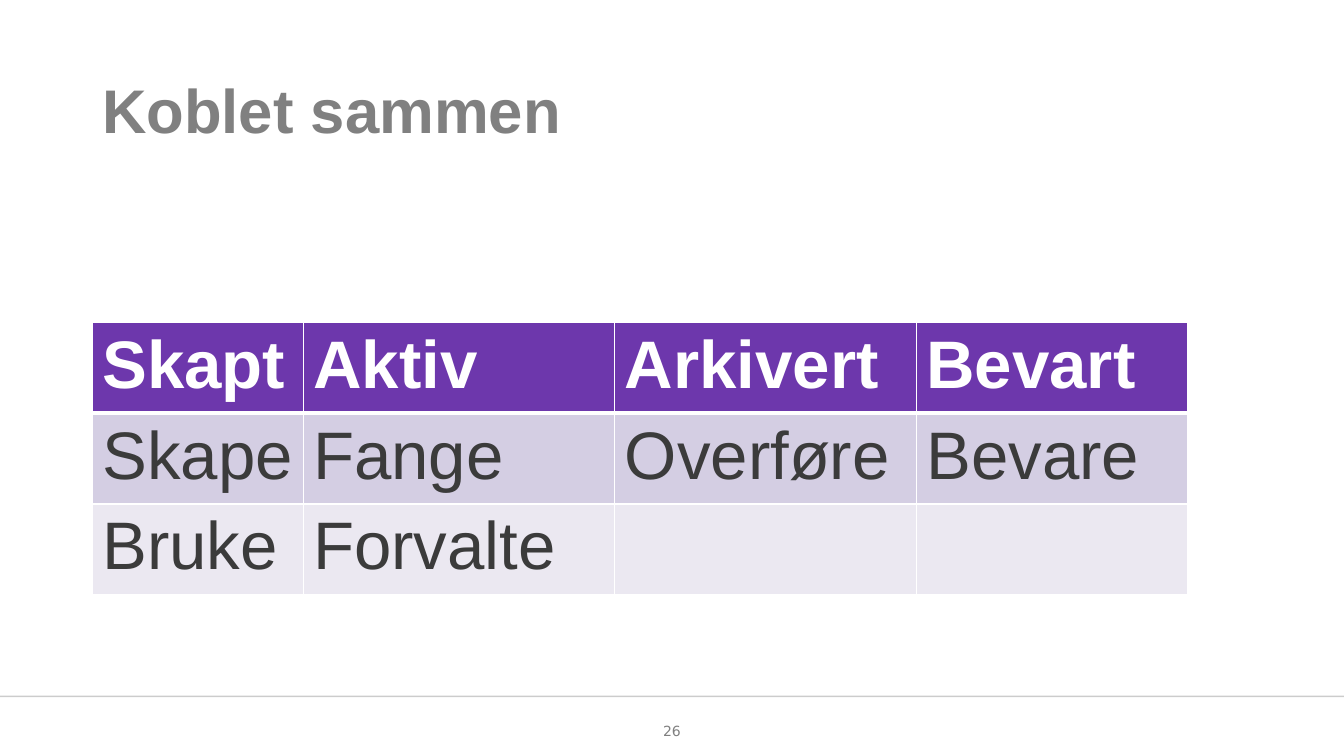
from dataclasses import dataclass

from lxml.etree import SubElement
from pptx import Presentation
from pptx.dml.color import RGBColor
from pptx.enum.shapes import MSO_CONNECTOR
from pptx.enum.text import MSO_ANCHOR, PP_ALIGN
from pptx.oxml import parse_xml
from pptx.oxml.ns import nsdecls, qn
from pptx.slide import Slide
from pptx.table import _Cell
from pptx.text.text import TextFrame
from pptx.util import Emu, Inches, Pt

GRID_COLUMNS, GRID_ROWS = 160, 90
UNIT = Inches(13.3333) // GRID_COLUMNS + 1

WHITE = RGBColor(0xFF, 0xFF, 0xFF)
BLACK = RGBColor(0x00, 0x00, 0x01)
GREY = RGBColor(0x80, 0x80, 0x80)
CHARCOAL = RGBColor(0x3B, 0x3B, 0x3B)
PURPLE = RGBColor(0x6D, 0x37, 0xAC)
LILAC = RGBColor(0xD4, 0xCE, 0xE3)
PALE_LILAC = RGBColor(0xEB, 0xE8, 0xF1)


@dataclass(frozen=True)
class Area:
    column: float
    row: float
    columns: float
    rows: float


@dataclass(frozen=True)
class TableRow:
    texts: tuple[str, ...]
    height: float
    fill: RGBColor
    color: RGBColor = CHARCOAL
    bold: bool = False
    top_border: float = 1
    bottom_border: float = 1


TITLE_AREA = Area(11, 4.8, 138, 17.4)
NUMBER_AREA = Area(74.6, 84.6, 10.8, 4.8)
FOOTER_ROW = 82.9
TABLE_COLUMN, TABLE_ROW = 11, 38.4
COLUMN_WIDTHS = (25.1, 37.1, 35.9, 32.3)
TABLE_ROWS = (
    TableRow(("Skapt", "Aktiv", "Arkivert", "Bevart"), 10.5, PURPLE, WHITE,
             bold=True, bottom_border=3),
    TableRow(("Skape", "Fange", "Overføre", "Bevare"), 10.8, LILAC, top_border=3),
    TableRow(("Bruke", "Forvalte", "", ""), 10.8, PALE_LILAC),
)


def grid(units: float) -> Emu:
    """Convert grid units to a slide length."""
    return Emu(round(units * UNIT))


def write(frame: TextFrame, text: str, *, size: float, color: RGBColor,
          font: str = "Arial", bold: bool = False,
          align: PP_ALIGN = PP_ALIGN.LEFT, line_spacing: float = 1.0) -> None:
    para = frame.paragraphs[0]
    para.alignment = align
    para.line_spacing = line_spacing
    span = para.add_run()
    span.text = text
    span.font.name = font
    span.font.size = Pt(size)
    span.font.bold = bold
    span.font.color.rgb = color


def add_text(page: Slide, area: Area, text: str, **text_format) -> None:
    box = page.shapes.add_textbox(grid(area.column), grid(area.row),
                                  grid(area.columns), grid(area.rows))
    box.text_frame.word_wrap = True
    box.text_frame.vertical_anchor = MSO_ANCHOR.MIDDLE
    write(box.text_frame, text, **text_format)


def set_borders(cell: _Cell, top: float, bottom: float) -> None:
    properties = cell._tc.get_or_add_tcPr()
    borders = (("lnL", 1), ("lnR", 1), ("lnT", top), ("lnB", bottom))
    for position, (tag, width) in enumerate(borders):
        properties.insert(position, parse_xml(
            f'<a:{tag} {nsdecls("a")} w="{Pt(width)}"><a:solidFill>'
            f'<a:srgbClr val="{WHITE}"/></a:solidFill></a:{tag}>'))


def add_table(page: Slide) -> None:
    frame = page.shapes.add_table(
        len(TABLE_ROWS), len(COLUMN_WIDTHS), grid(TABLE_COLUMN), grid(TABLE_ROW),
        grid(sum(COLUMN_WIDTHS)), grid(sum(row.height for row in TABLE_ROWS)))
    table = frame.table
    for column, width in zip(table.columns, COLUMN_WIDTHS):
        column.width = grid(width)
    for table_row, row in zip(table.rows, TABLE_ROWS):
        table_row.height = grid(row.height)
        for cell, text in zip(table_row.cells, row.texts):
            cell.fill.solid()
            cell.fill.fore_color.rgb = row.fill
            cell.margin_right = grid(0.5)
            set_borders(cell, row.top_border, row.bottom_border)
            if text:
                write(cell.text_frame, text, size=48, color=row.color, bold=row.bold)


def add_footer_line(page: Slide) -> None:
    line = page.shapes.add_connector(MSO_CONNECTOR.STRAIGHT, 0, grid(FOOTER_ROW),
                                     grid(GRID_COLUMNS), grid(FOOTER_ROW))
    line.line.width = Pt(1)
    line.line.color.rgb = BLACK
    properties = line._element.spPr
    color = next(properties.iter(qn("a:srgbClr")))
    SubElement(color, qn("a:alpha"), val="20000")
    SubElement(properties, qn("a:effectLst"))


def main() -> None:
    deck = Presentation()
    deck.slide_width, deck.slide_height = grid(GRID_COLUMNS), grid(GRID_ROWS)
    page = deck.slides.add_slide(deck.slide_layouts[6])
    add_footer_line(page)
    add_text(page, TITLE_AREA, "Koblet sammen", size=44, color=GREY, bold=True,
             line_spacing=0.9)
    add_table(page)
    add_text(page, NUMBER_AREA, "26", size=10, color=GREY, font="DejaVu Sans",
             align=PP_ALIGN.CENTER)
    deck.save("out.pptx")


if __name__ == "__main__":
    main()
